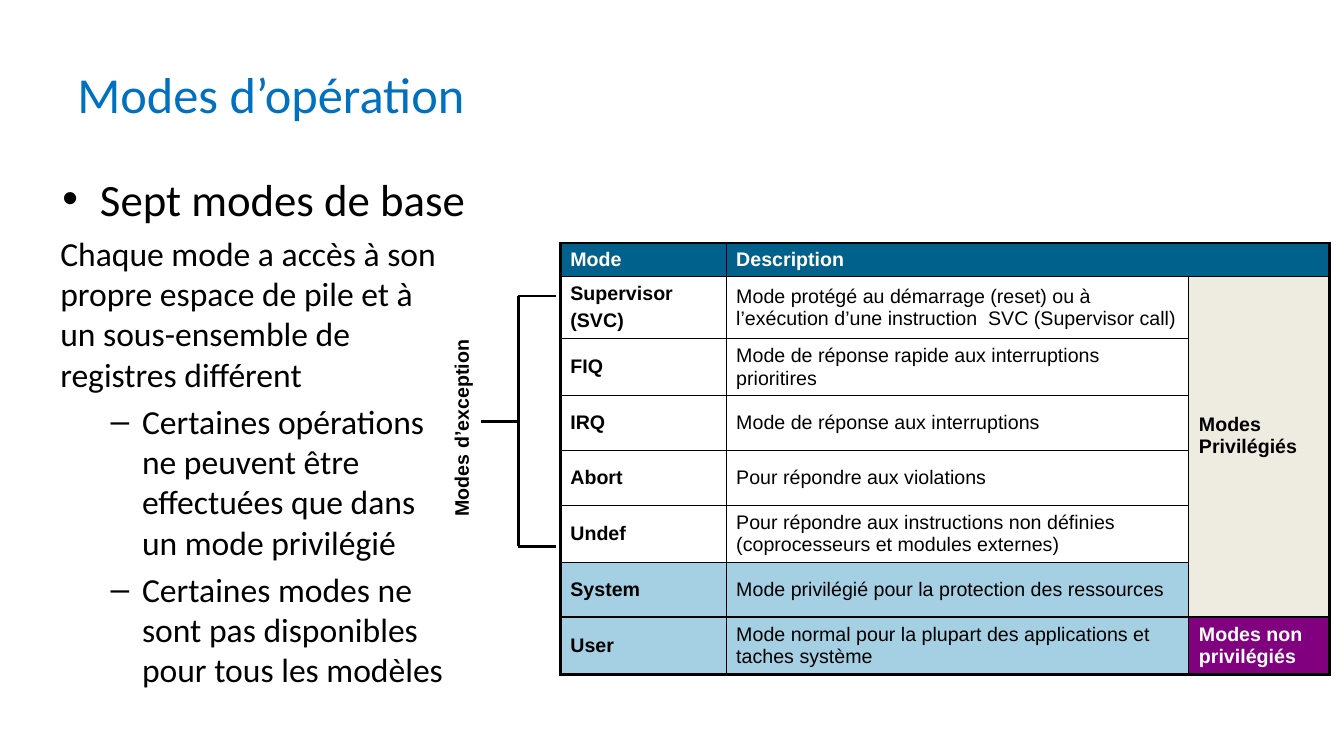
import pptx
import pptx.dml.color
import pptx.enum.shapes
import pptx.enum.text
import pptx.oxml
import pptx.oxml.ns
import pptx.util
from pptx.util import Cm, Pt

ANCHOR = pptx.enum.text.MSO_ANCHOR
BODY = dict(name="Calibri", size=Pt(24), bold=False)
TABLE = dict(name="Arial", size=Pt(14), bold=False)
BOLD = dict(TABLE, bold=True)
BLUE = "A5D0E3"
MODES = [
    ("Supervisor\n(SVC)", "Mode protégé au démarrage (reset) ou à l’exécution d’une instruction  SVC (Supervisor call)", None),
    ("FIQ", "Mode de réponse rapide aux interruptions prioritires", None),
    ("IRQ", "Mode de réponse aux interruptions", None),
    ("Abort", "Pour répondre aux violations", None),
    ("Undef", "Pour répondre aux instructions non définies (coprocesseurs et modules externes)", None),
    ("System", "Mode privilégié pour la protection des ressources", BLUE),
    ("User", "Mode normal pour la plupart des applications et taches système", BLUE),
]


def rgb(value):
    """Return the colour for a hex string."""
    return pptx.dml.color.RGBColor.from_string(value)


def make(tag, **attrs):
    """Return a DrawingML element with the given attributes."""
    el = pptx.oxml.parse_xml(f"<{tag} {pptx.oxml.ns.nsdecls('a')}/>")
    for key, value in attrs.items():
        el.set(key, str(value))
    return el


def write(p, text, fmt, color="000000"):
    """Write formatted text into a paragraph."""
    p.text = text
    for key, value in fmt.items():
        setattr(p.runs[0].font, key, value)
    p.runs[0].font.color.rgb = rgb(color)


def bullet(p, char, margin, hang):
    """Give a paragraph a bullet with a hanging indent."""
    pPr = p._p.get_or_add_pPr()
    pPr.set("marL", str(Cm(margin)))
    pPr.set("indent", str(-Cm(hang)))
    pPr.append(make("a:buFont", typeface="Arial"))
    pPr.append(make("a:buChar", char=char))


def add_text(s, left, top, width, height):
    """Add a wrapping text box and return its frame and shape."""
    sp = s.shapes.add_textbox(Cm(left), Cm(top), Cm(width), Cm(height))
    sp.text_frame.word_wrap = True
    return sp.text_frame, sp


def add_heading(s, left, top, width, height):
    """Add the slide title and the bulleted line under it."""
    tf, _ = add_text(s, left, top, width, height)
    tf.vertical_anchor = ANCHOR.MIDDLE
    write(tf.paragraphs[0], "Modes d’opération", dict(BODY, size=Pt(36)), "0070C0")
    tf, _ = add_text(s, left - 0.38, top + height + 0.25, 21.21, 1.73)
    bullet(tf.paragraphs[0], "•", 0.95, 0.95)
    write(tf.paragraphs[0], "Sept modes de base", dict(BODY, size=Pt(32)))


def add_notes_column(s, left, top, width, height):
    """Add the explanatory text on the left."""
    tf, _ = add_text(s, left, top, width, height)
    write(tf.paragraphs[0], "Chaque mode a accès à son propre espace de pile "
          "et à un sous-ensemble de registres différent", BODY)
    for text in ("Certaines opérations ne peuvent être effectuées que dans un mode privilégié",
                 "Certaines modes ne sont pas disponibles pour tous les modèles"):
        p = tf.add_paragraph()
        p.space_before = Pt(4.8)
        bullet(p, "–", 2.06, 0.79)
        write(p, text, BODY)


def add_line(s, x1, y1, x2, y2):
    """Add a plain black line."""
    cx = s.shapes.add_connector(pptx.enum.shapes.MSO_CONNECTOR.STRAIGHT,
                                Cm(x1), Cm(y1), Cm(x2), Cm(y2))
    cx.line.width = Pt(2)
    cx.line.color.rgb = rgb("000000")
    cx._element.spPr.append(make("a:effectLst"))


def add_bracket(s, left, top, width, height):
    """Add the bracket over the exception modes and its upright label."""
    spine, middle = left + width / 2, top + height / 2
    add_line(s, spine, top, spine, top + height)
    for y in (top, top + height):
        add_line(s, spine, y, left + width, y)
    add_line(s, left, middle, spine, middle)
    w, h = 5.36, 0.84
    tf, sp = add_text(s, left - 0.5 - w / 2, middle - 0.53 - h / 2 + 0.5, w, h)
    sp.rotation = 270
    write(tf.paragraphs[0], "Modes d’exception", BOLD)


def fill_cell(cell, text, fmt, color="000000", fill=None):
    """Write a table cell and set its background."""
    cell.vertical_anchor = ANCHOR.MIDDLE
    tf = cell.text_frame
    for i, line in enumerate(text.split("\n")):
        p = tf.add_paragraph() if i else tf.paragraphs[0]
        if i:
            p.space_before = Pt(3.5)
        write(p, line, fmt, color)
    if fill:
        cell.fill.solid()
        cell.fill.fore_color.rgb = rgb(fill)
    else:
        cell.fill.background()


def border_cells(table):
    """Draw thick outer and thin inner borders."""
    rows, cols = len(table.rows), len(table.columns)
    for r in range(rows):
        for c in range(cols):
            cell = table.cell(r, c)
            if cell.is_spanned:
                continue
            outer = dict(L=c == 0, R=c + (cell.span_width or 1) == cols,
                         T=r == 0, B=r + (cell.span_height or 1) == rows)
            tcPr = cell._tc.get_or_add_tcPr()
            for side, thick in outer.items():
                ln = make(f"a:ln{side}", w=Pt(2.25 if thick else 1))
                solid = make("a:solidFill")
                solid.append(make("a:srgbClr", val="000000"))
                ln.append(solid)
                tcPr.append(ln)


def add_mode_table(s, left, top, width, height):
    """Add the table of processor modes."""
    n = len(MODES) + 1
    table = s.shapes.add_table(n, 3, Cm(left), Cm(top), Cm(width), Cm(height)).table
    table.first_row = table.horz_banding = False
    for col, w in zip(table.columns, (4.18, 11.66, width - 15.84)):
        col.width = Cm(w)
    header, first = 0.82, 1.49
    for i, row in enumerate(table.rows):
        row.height = Cm((header, first)[i] if i < 2 else (height - header - first) / (n - 2))
    table.cell(0, 1).merge(table.cell(0, 2))
    table.cell(1, 2).merge(table.cell(n - 2, 2))
    border_cells(table)
    for c, text in enumerate(("Mode", "Description")):
        fill_cell(table.cell(0, c), text, BOLD, "FFFFFF", "00618C")
    for r, (mode, description, fill) in enumerate(MODES, 1):
        fill_cell(table.cell(r, 0), mode, BOLD, fill=fill)
        fill_cell(table.cell(r, 1), description, TABLE, fill=fill)
    privileged = table.cell(1, 2)
    fill_cell(privileged, "Modes Privilégiés", BOLD, fill="EEECE1")
    privileged.margin_bottom = Cm(0.7)
    fill_cell(table.cell(n - 1, 2), "Modes non privilégiés", BOLD, "FFFFFF", "800080")


def main():
    """Build the slide and save it."""
    prs = pptx.Presentation()
    prs.slide_width, prs.slide_height = Cm(33.87), Cm(19.05)
    s = prs.slides.add_slide(prs.slide_layouts[6])
    add_heading(s, 1.7, 0.76, 30.48, 3.18)
    add_mode_table(s, 14.12, 6.12, 19.38, 10.58)
    add_bracket(s, 12.12, 7.46, 1.88, 6.31)
    add_notes_column(s, 1.27, 5.74, 10.26, 12.98)
    prs.save("out.pptx")


if __name__ == "__main__":
    main()
